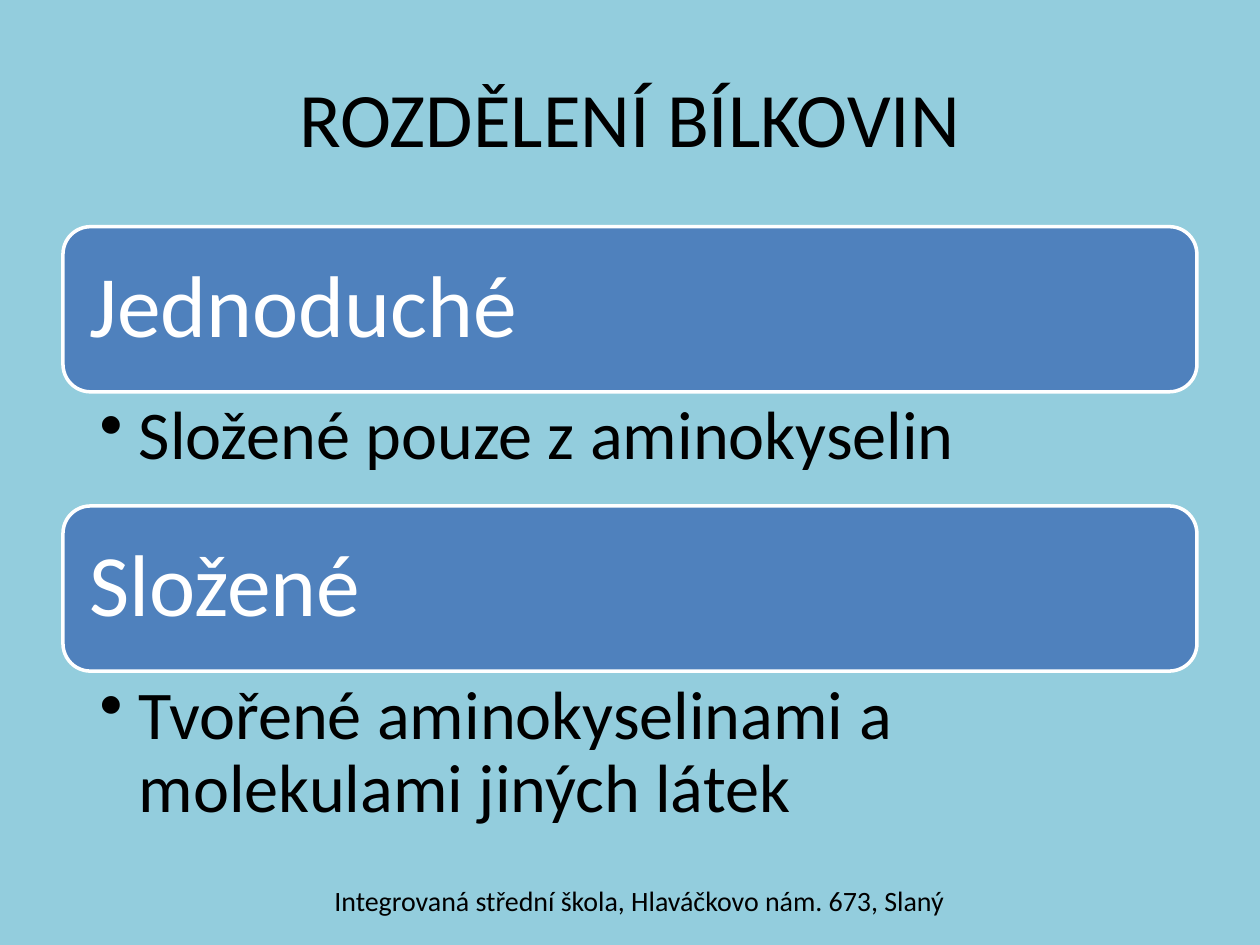
from dataclasses import dataclass

from lxml.etree import SubElement
from pptx import Presentation
from pptx.dml.color import RGBColor
from pptx.enum.shapes import MSO_SHAPE
from pptx.enum.text import MSO_ANCHOR, PP_ALIGN
from pptx.oxml.ns import qn
from pptx.util import Cm, Pt

# Content: (kind of protein, description, height of the description in cm)
TITLE = "ROZDĚLENÍ BÍLKOVIN"
KINDS = [
    ("Jednoduché", "Složené pouze z aminokyselin", 2.3),
    ("Složené", "Tvořené aminokyselinami a molekulami jiných látek", 3.38),
]
SCHOOL = "Integrovaná střední škola, Hlaváčkovo nám. 673, Slaný"


@dataclass(frozen=True)
class Theme:
    font: str = "Calibri"
    background: RGBColor = RGBColor(0x93, 0xCD, 0xDD)
    band: RGBColor = RGBColor(0x4F, 0x81, 0xBD)
    light: RGBColor = RGBColor(0xFF, 0xFF, 0xFF)
    dark: RGBColor = RGBColor(0, 0, 0)
    title_size: int = 44
    kind_size: int = 50
    detail_size: int = 39
    school_size: int = 16


THEME = Theme()

# Layout in cm
LEFT, WIDTH = 1.27, 22.86
BANDS_TOP, BAND_HEIGHT = 4.57, 3.33
BAND_INSET = 0.37
BULLET_INDENT = 0.79


def write(shape, text, size, color, insets, align=PP_ALIGN.LEFT,
          anchor=MSO_ANCHOR.MIDDLE):
    """Fill a shape with one paragraph; insets are left, top, right, bottom."""
    frame = shape.text_frame
    frame.word_wrap = True
    frame.vertical_anchor = anchor
    (frame.margin_left, frame.margin_top,
     frame.margin_right, frame.margin_bottom) = map(Cm, insets)
    paragraph = frame.paragraphs[0]
    paragraph.alignment = align
    run = paragraph.add_run()
    run.text = text
    run.font.name = THEME.font
    run.font.size = Pt(size)
    run.font.color.rgb = color
    return paragraph


def add_text(slide, box, *args, **kwargs):
    return write(slide.shapes.add_textbox(*map(Cm, box)), *args, **kwargs)


def add_bullet(paragraph):
    properties = paragraph._p.get_or_add_pPr()
    properties.set("marL", str(Cm(BULLET_INDENT)))
    properties.set("indent", str(-Cm(BULLET_INDENT)))
    SubElement(properties, qn("a:buChar")).set("char", "•")


def add_band(slide, top, kind):
    band = slide.shapes.add_shape(
        MSO_SHAPE.ROUNDED_RECTANGLE,
        Cm(LEFT), Cm(top), Cm(WIDTH), Cm(BAND_HEIGHT))
    band.shadow.inherit = False
    band.fill.solid()
    band.fill.fore_color.rgb = THEME.band
    band.line.color.rgb = THEME.light
    band.line.width = Pt(2)
    label = write(band, kind, THEME.kind_size, THEME.light, [BAND_INSET] * 4)
    label.line_spacing = 0.9


def main():
    deck = Presentation()
    deck.slide_width, deck.slide_height = Cm(25.4), Cm(19.05)
    slide = deck.slides.add_slide(deck.slide_layouts[6])
    slide.background.fill.solid()
    slide.background.fill.fore_color.rgb = THEME.background

    # Title
    add_text(slide, (LEFT, 0.76, WIDTH, 3.18), TITLE, THEME.title_size,
             THEME.dark, (0.25, 0.13, 0.25, 0.13), align=PP_ALIGN.CENTER)

    # Bands, each followed by its description
    top = BANDS_TOP
    for kind, detail, detail_height in KINDS:
        add_band(slide, top, kind)
        top += BAND_HEIGHT
        description = add_text(
            slide, (LEFT, top, WIDTH, detail_height), detail,
            THEME.detail_size, THEME.dark, (0.74, 0.18, 0.99, 0.18),
            anchor=MSO_ANCHOR.TOP)
        description.line_spacing = 0.9
        add_bullet(description)
        top += detail_height

    # School address
    add_text(slide, (5.69, 17.73, 14.4, 1.32), SCHOOL, THEME.school_size,
             THEME.dark, (0.25, 0.13, 0.25, 0.6), align=PP_ALIGN.CENTER)

    deck.save("out.pptx")


if __name__ == "__main__":
    main()
